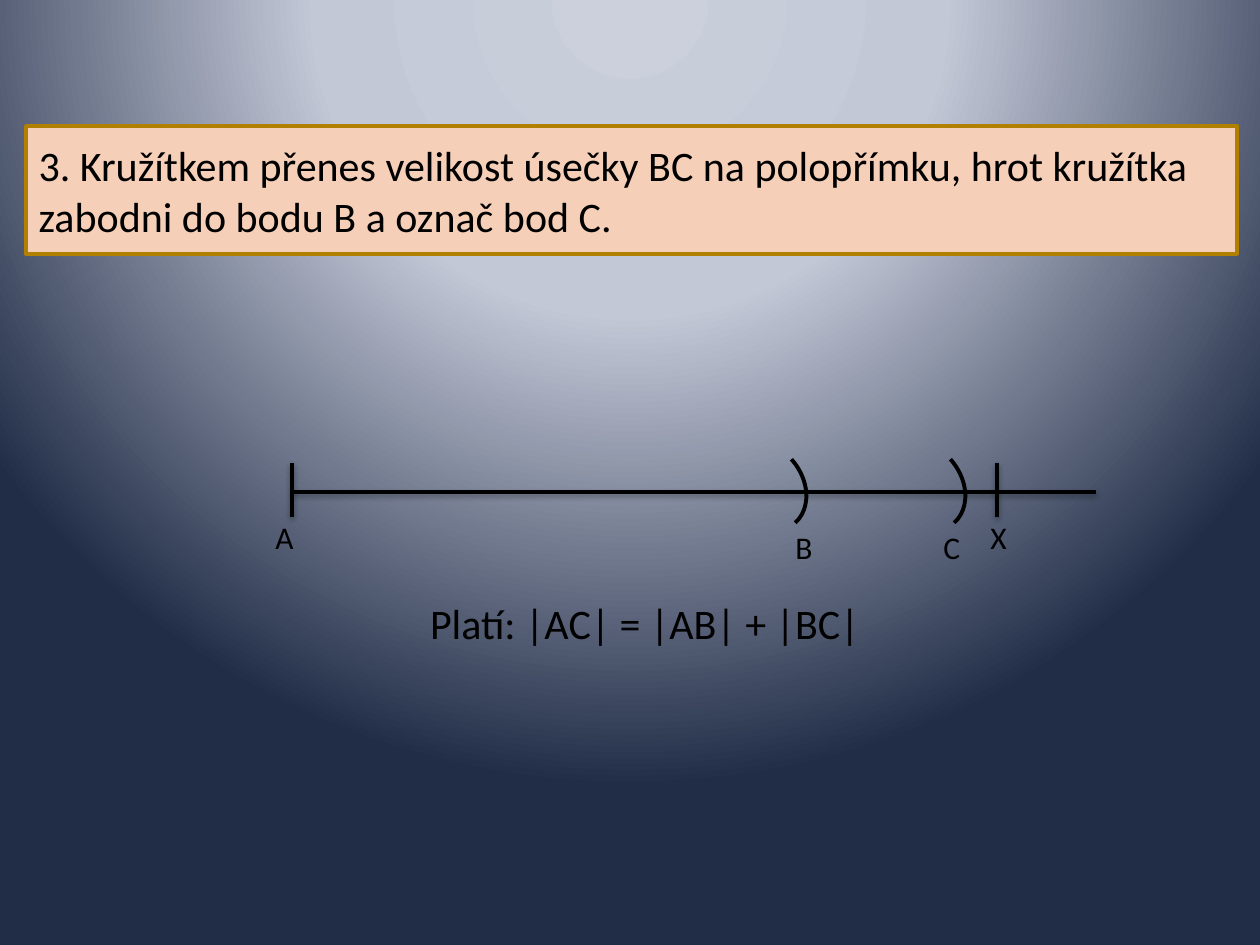
from lxml import etree
from pptx import Presentation
from pptx.dml.color import RGBColor
from pptx.enum import shapes, text
from pptx.oxml import parse_xml
from pptx.util import Emu, Pt

THEME = {
    "font": "Calibri",
    "ink": RGBColor.from_string("000000"),
    "box": RGBColor.from_string("F6CFB9"),
    "border": RGBColor.from_string("B28000"),
    "glow": [(0, "CBD0DC"), (40, "C3C8D7"), (100, "212D47")],
    "body": Pt(24),
    "label": Pt(18),
    "rule": Pt(2),
    "arc": Pt(2.25),
}
SCALE = 914400 / 126
DRAWING = "http://schemas.openxmlformats.org/drawingml/2006/main"


def px(*lengths):
    return [Emu(round(length * SCALE)) for length in lengths]


def write(shape, words, size, align, **frame_format):
    frame = shape.text_frame
    for name, value in frame_format.items():
        setattr(frame, name, value)
    paragraph = frame.paragraphs[0]
    paragraph.alignment = align
    run = paragraph.add_run()
    run.text = words
    for name, value in {"name": THEME["font"], "size": size, "bold": False}.items():
        setattr(run.font, name, value)
    run.font.color.rgb = THEME["ink"]


deck = Presentation()
deck.slide_width, deck.slide_height = px(1260, 945)
slide = deck.slides.add_slide(deck.slide_layouts[5])

slide.background.fill.solid()
backdrop = slide.background._cSld.bg.bgPr
stops = "".join(
    f'<a:gs pos="{position * 1000}"><a:srgbClr val="{color}"/></a:gs>'
    for position, color in THEME["glow"]
)
backdrop.replace(backdrop[0], parse_xml(
    f'<a:gradFill xmlns:a="{DRAWING}" rotWithShape="1"><a:gsLst>{stops}</a:gsLst>'
    '<a:path path="circle"><a:fillToRect l="50000" t="-80000" r="50000" b="180000"/>'
    '</a:path></a:gradFill>'
))

task = slide.shapes.title
task.left, task.top, task.width, task.height = px(26, 126, 1211, 128)
task.fill.solid()
task.fill.fore_color.rgb = THEME["box"]
task.line.color.rgb = THEME["border"]
task.line.width = THEME["rule"]
write(
    task,
    "3. Kružítkem přenes velikost úsečky BC na polopřímku, "
    "hrot kružítka zabodni do bodu B a označ bod C.",
    THEME["body"], text.PP_ALIGN.LEFT,
    word_wrap=True, auto_size=text.MSO_AUTO_SIZE.NONE,
    vertical_anchor=text.MSO_ANCHOR.MIDDLE,
)

axis_y, start_x, end_x, mark_x = 492, 292, 1096, 997
tick_top, tick_bottom = 463, 517
for ends in [
    (start_x, axis_y, end_x, axis_y),
    (start_x, tick_top, start_x, tick_bottom),
    (mark_x, tick_top, mark_x, tick_bottom),
]:
    stroke = slide.shapes.add_connector(shapes.MSO_CONNECTOR.STRAIGHT, *px(*ends))
    stroke.line.color.rgb = THEME["ink"]
    stroke.line.width = THEME["rule"]
    effects = etree.SubElement(stroke._element.spPr, f"{{{DRAWING}}}effectLst")
    effects.append(parse_xml(
        f'<a:outerShdw xmlns:a="{DRAWING}" blurRad="{Pt(3.1)}" dist="{Pt(1.6)}" '
        'dir="5400000" rotWithShape="0"><a:srgbClr val="000000">'
        '<a:alpha val="38000"/></a:srgbClr></a:outerShdw>'
    ))

for arc_x in (712, 871):
    compass = slide.shapes.add_shape(shapes.MSO_SHAPE.ARC, *px(arc_x, 446, 100, 79))
    compass.rotation = 48.3
    compass.shadow.inherit = False
    compass.fill.background()
    compass.line.color.rgb = THEME["ink"]
    compass.line.width = THEME["arc"]

left, center = text.PP_ALIGN.LEFT, text.PP_ALIGN.CENTER
for words, box, size, align in [
    ("A", (263, 512, 100, 50), THEME["label"], left),
    ("X", (978, 512, 100, 50), THEME["label"], left),
    ("B", (783, 522, 55, 50), THEME["label"], left),
    ("C", (931, 522, 55, 50), THEME["label"], left),
    ("Platí: |AC| = |AB| + |BC|", (134, 591, 1022, 63), THEME["body"], center),
]:
    caption = slide.shapes.add_textbox(*px(*box))
    write(caption, words, size, align, word_wrap=True,
          auto_size=text.MSO_AUTO_SIZE.SHAPE_TO_FIT_TEXT)

deck.save("out.pptx")
